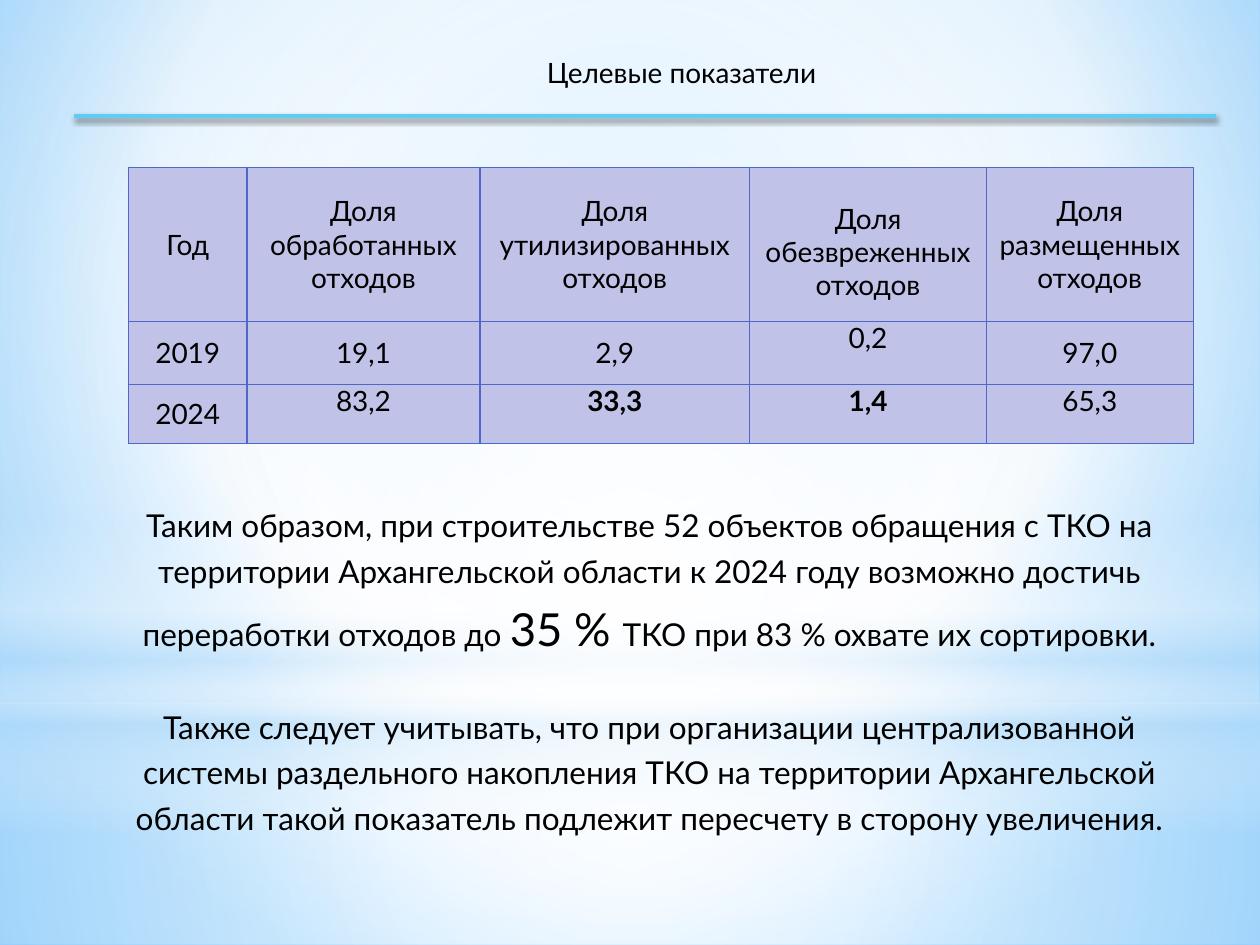
import pptx
import pptx.dml.color
import pptx.enum.shapes
import pptx.enum.text
import pptx.oxml
import pptx.oxml.ns
import pptx.util

Inches = pptx.util.Inches
Pt = pptx.util.Pt
Shape = pptx.enum.shapes.MSO_SHAPE
Anchor = pptx.enum.text.MSO_ANCHOR
CENTER = pptx.enum.text.PP_ALIGN.CENTER
NAMESPACE = pptx.oxml.ns.nsdecls("a")


def color(hex_value):
    return pptx.dml.color.RGBColor.from_string(hex_value)


def color_xml(hex_value, opacity=100):
    return f'<a:srgbClr val="{hex_value}"><a:alpha val="{opacity * 1000}"/></a:srgbClr>'


def gradient(stops, focus=None):
    """Radial gradient around the focus rectangle, or top to bottom without one."""
    stops_xml = "".join(
        f'<a:gs pos="{position * 1000}">{color_xml(*shade)}</a:gs>' for position, *shade in stops)
    if focus:
        sides = " ".join(f'{side}="{value * 1000}"' for side, value in zip("ltrb", focus))
        way = f'<a:path path="circle"><a:fillToRect {sides}/></a:path>'
    else:
        way = '<a:lin ang="5400000" scaled="0"/>'
    return pptx.oxml.parse_xml(
        f'<a:gradFill {NAMESPACE} rotWithShape="1"><a:gsLst>{stops_xml}</a:gsLst>{way}</a:gradFill>')


class SlideBuilder:
    font = "Lato"
    text_color = "000000"
    cell_fill = "C0C2E8"
    border_color = "4E67C8"
    rule_color = "5ECCF3"

    def __init__(self, presentation):
        self.slide = presentation.slides.add_slide(presentation.slide_layouts[1])
        self.shapes = self.slide.shapes

    def style_run(self, run, size, bold=False):
        run.font.name = self.font
        run.font.size = Pt(size)
        run.font.bold = bold
        run.font.color.rgb = color(self.text_color)

    def background(self, stops, focus):
        fill = self.slide.background.fill
        fill.solid()
        properties = self.slide.background._cSld.bg.bgPr
        properties.replace(properties[0], gradient(stops, focus))

    def glow(self, kind, top, height, stops, focus=None):
        shape = self.shapes.add_shape(kind, 0, Inches(top), Inches(10), Inches(height))
        shape.shadow.inherit = False
        shape.line.fill.background()
        shape.fill.solid()
        properties = shape._element.spPr
        solid_fill = properties.find(pptx.oxml.ns.qn("a:solidFill"))
        properties.replace(solid_fill, gradient(stops, focus))

    def placeholder(self, index, box, paragraphs, line_spacing=1.0, gap=0):
        """Fill a placeholder; each paragraph is a list of (text, size)."""
        shape = self.slide.placeholders[index]
        shape.left, shape.top, shape.width, shape.height = map(Inches, box)
        self.shapes._spTree.append(shape._element)  # in front of the glows
        frame = shape.text_frame
        frame.word_wrap = True
        frame.auto_size = pptx.enum.text.MSO_AUTO_SIZE.NONE
        frame.vertical_anchor = Anchor.TOP
        for number, parts in enumerate(paragraphs):
            paragraph = frame.add_paragraph() if number else frame.paragraphs[0]
            paragraph.alignment = CENTER
            paragraph.line_spacing = line_spacing
            paragraph.space_before = Pt(gap if number else 0)
            properties = paragraph._p.get_or_add_pPr()
            properties.set("marL", "0")
            properties.set("indent", "0")
            properties.append(pptx.oxml.parse_xml(f"<a:buNone {NAMESPACE}/>"))
            for text, size in parts:
                run = paragraph.add_run()
                run.text = text
                self.style_run(run, size)

    def cell(self, cell, text, anchor, bold, margin_top):
        cell.margin_left = cell.margin_right = Inches(0.07)
        cell.margin_top, cell.margin_bottom = Inches(margin_top), 0
        cell.vertical_anchor = anchor
        cell.text_frame.text = text
        paragraph = cell.text_frame.paragraphs[0]
        paragraph.alignment = CENTER
        self.style_run(paragraph.runs[0], 16, bold)
        properties = cell._tc.get_or_add_tcPr()
        for side in "LRTB":
            properties.append(pptx.oxml.parse_xml(
                f'<a:ln{side} {NAMESPACE} w="{Pt(0.75)}"><a:solidFill>'
                f'{color_xml(self.border_color)}</a:solidFill></a:ln{side}>'))
        cell.fill.solid()
        cell.fill.fore_color.rgb = color(self.cell_fill)

    def table(self, box, widths, heights, rows, top_cells, bold_cells, margins):
        table = self.shapes.add_table(len(rows), len(widths), *map(Inches, box)).table
        table.first_row = table.horz_banding = False
        for column, width in zip(table.columns, widths):
            column.width = Inches(width)
        for row, height in zip(table.rows, heights):
            row.height = Inches(height)
        for r, texts in enumerate(rows):
            for c, text in enumerate(texts):
                anchor = Anchor.TOP if (r, c) in top_cells else Anchor.MIDDLE
                self.cell(table.cell(r, c), text, anchor,
                          (r, c) in bold_cells, margins.get((r, c), 0))

    def rule(self, left, right, top):
        line = self.shapes.add_connector(
            pptx.enum.shapes.MSO_CONNECTOR.STRAIGHT,
            Inches(left), Inches(top), Inches(right), Inches(top))
        line.line.color.rgb = color(self.rule_color)
        line.line.width = Pt(2)
        line._element.spPr.append(pptx.oxml.parse_xml(
            f'<a:effectLst {NAMESPACE}><a:outerShdw blurRad="{Pt(3.1)}" dist="{Pt(1.8)}" '
            f'dir="5400000" rotWithShape="0">{color_xml("000000", 45)}</a:outerShdw></a:effectLst>'))


def main():
    presentation = pptx.Presentation()
    presentation.slide_width, presentation.slide_height = Inches(10), Inches(7.5)
    builder = SlideBuilder(presentation)

    # Sky background with soft glows
    white, blue = "FFFFFF", "B4DCFA"
    middle = (50, 50, 50, 50)
    builder.background([(0, "9ED5FF"), (60, white), (100, "5BB9FF")], (20, 10, 20, 60))
    builder.glow(Shape.RECTANGLE, 5.58, 1.92,
                 [(0, white, 91), (37, white, 76), (100, blue, 79)], middle)
    builder.glow(Shape.RECTANGLE, 0, 5.58,
                 [(0, white, 89), (48, white, 62), (100, blue, 79)], middle)
    builder.glow(Shape.RECTANGLE, 4.12, 2.5,
                 [(0, white, 0), (29, white, 30), (45, blue, 40),
                  (55, white, 26), (65, blue, 60), (100, white, 0)])
    builder.glow(Shape.OVAL, 1.75, 5.58, [(0, white, 100), (56, white, 0)], middle)

    # Title
    builder.placeholder(0, (2.81, 0.39, 5.2, 0.37), [[("Целевые показатели", 16)]])

    # Target figures
    subjects = ["обработанных", "утилизированных", "обезвреженных", "размещенных"]
    builder.table(
        (1.02, 1.33, 8.45, 2.19),
        widths=[0.94, 1.85, 2.14, 1.88, 1.64],
        heights=[1.22, 0.5, 0.47],
        rows=[
            ["Год"] + [f"Доля {subject} отходов" for subject in subjects],
            ["2019", "19,1", "2,9", "0,2", "97,0"],
            ["2024", "83,2", "33,3", "1,4", "65,3"],
        ],
        top_cells={(0, 3), (1, 3), (2, 1), (2, 2), (2, 3), (2, 4)},
        bold_cells={(2, 2), (2, 3)},
        margins={(0, 3): 0.27})

    # Rule under the title
    builder.rule(0.59, 9.65, 0.92)

    # Conclusions
    builder.placeholder(1, (0.78, 3.91, 8.75, 2.81), [
        [("Таким образом, при строительстве 52 объектов обращения с ТКО на территории "
          "Архангельской области к 2024 году возможно достичь переработки отходов до ", 18),
         ("35 % ", 26),
         ("ТКО при 83 % охвате их сортировки.", 18)],
        [("Также следует учитывать, что при организации централизованной системы "
          "раздельного накопления ТКО на территории Архангельской области такой "
          "показатель подлежит пересчету в сторону увеличения.", 18)],
    ], line_spacing=1.2, gap=26)

    presentation.save("out.pptx")


if __name__ == "__main__":
    main()
